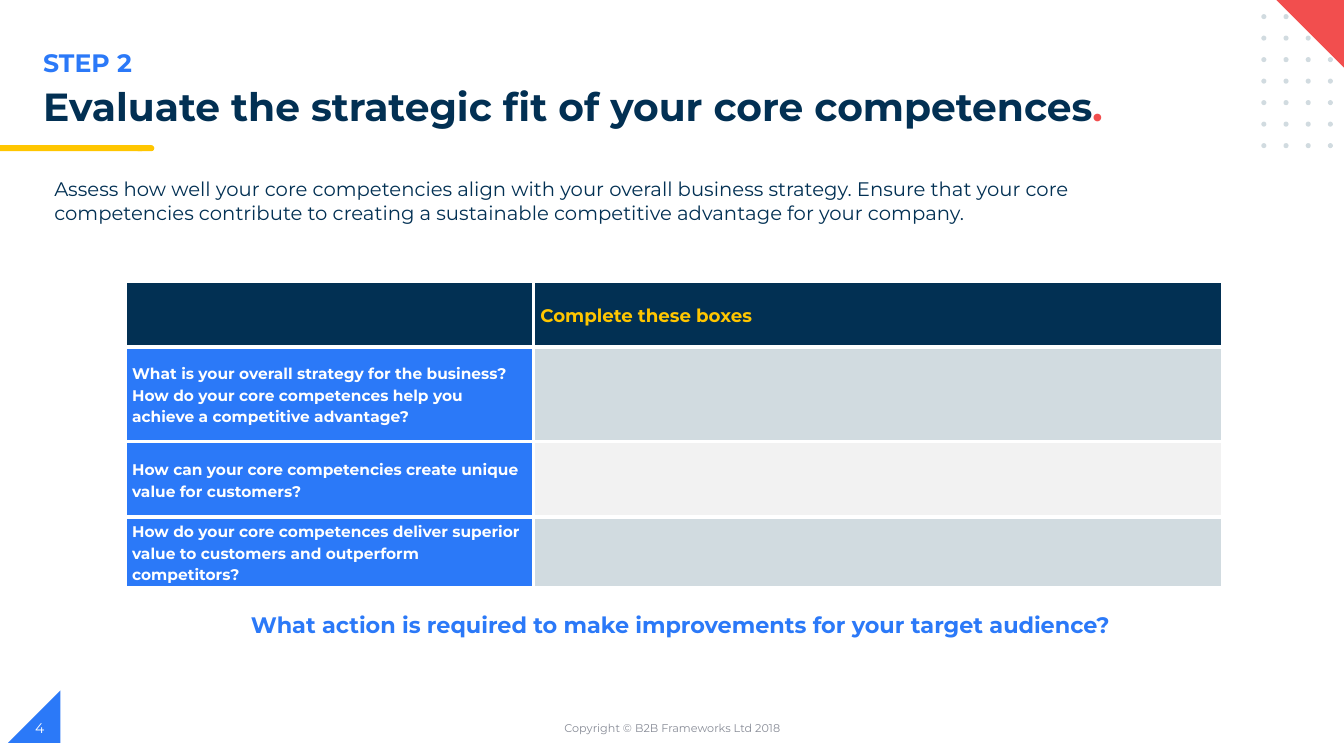
import pptx
import pptx.util
import pptx.dml.color
import pptx.enum.shapes
import pptx.enum.text
import pptx.oxml
import pptx.oxml.ns
from dataclasses import dataclass

Inches, Pt = pptx.util.Inches, pptx.util.Pt
Shape = pptx.enum.shapes.MSO_SHAPE
Anchor = pptx.enum.text.MSO_ANCHOR
Align = pptx.enum.text.PP_ALIGN


@dataclass(frozen=True)
class Theme:
    font: str = "Montserrat"
    navy: str = "023053"
    blue: str = "2B79F8"
    red: str = "F24E4E"
    yellow: str = "FFC600"
    mist: str = "D1DBE0"
    pale: str = "F2F2F2"
    grey: str = "888C97"
    white: str = "FFFFFF"
    title: int = 28
    step: int = 18
    action: int = 16
    body: int = 14
    header: int = 13
    question: int = 11
    number: int = 10
    footer: int = 8


theme = Theme()

# Content: text boxes as (left, top, width, height), size, bold, align, anchor, spans
TEXTS = [
    ((0.33, 0.42, 6.69, 0.4), theme.step, True, Align.LEFT, Anchor.TOP,
     [("STEP 2", theme.blue)]),
    ((0.33, 0.82, 11.15, 0.56), theme.title, True, Align.LEFT, Anchor.TOP,
     [("Evaluate the strategic fit of your core competences", theme.navy), (".", theme.red)]),
    ((0.44, 1.71, 11.64, 0.57), theme.body, False, Align.LEFT, Anchor.TOP,
     [("Assess how well your core competencies align with your overall business strategy. "
       "Ensure that your core competencies contribute to creating a sustainable competitive "
       "advantage for your company.", theme.navy)]),
    ((2.39, 6.01, 8.83, 0.37), theme.action, True, Align.LEFT, Anchor.TOP,
     [("What action is required to make improvements for your target audience?", theme.blue)]),
    ((4.42, 7.02, 4.5, 0.4), theme.footer, False, Align.CENTER, Anchor.MIDDLE,
     [("Copyright © B2B Frameworks Ltd 2018", theme.grey)]),
    ((0.25, 7.02, 3, 0.4), theme.number, False, Align.LEFT, Anchor.MIDDLE,
     [("4", theme.white)]),
]

# Table rows: height, then (text, size, text colour, fill) for each cell
HEADER = "Complete these boxes"
QUESTIONS = [
    (0.94, "What is your overall strategy for the business? How do your core competences "
           "help you achieve a competitive advantage?", theme.mist),
    (0.75, "How can your core competencies create unique value for customers?", theme.pale),
    (0.7, "How do your core competences deliver superior value to customers and outperform "
          "competitors?", theme.mist),
]
ROWS = [(0.65, [("", theme.header, theme.yellow, theme.navy),
                (HEADER, theme.header, theme.yellow, theme.navy)])]
ROWS += [(height, [(question, theme.question, theme.white, theme.blue),
                   ("", theme.question, theme.navy, answer_fill)])
         for height, question, answer_fill in QUESTIONS]
COLUMNS = [4.05, 6.84]
TABLE_LEFT, TABLE_TOP = 1.24, 2.79

# Decoration: shape, (left, top, width, height), fill, rotation
DOT, DOT_LEFT, DOT_TOP = 0.05, 12.51, 0.14
DOT_COLUMNS, DOT_ROWS = 4, 7
DOT_STEP_X, DOT_STEP_Y = 0.22, 1.28 / 6
SHAPES = [
    (Shape.RIGHT_TRIANGLE, (0.08, 6.85, 0.52, 0.52), theme.blue, 270),
    (Shape.FLOWCHART_TERMINATOR, (1.34, 1.44, 0.19, 0.06), theme.yellow, 0),
    (Shape.RECTANGLE, (0, 1.44, 1.41, 0.06), theme.yellow, 0),
]
SHAPES += [
    (Shape.OVAL, (DOT_LEFT + column * DOT_STEP_X, DOT_TOP + row * DOT_STEP_Y, DOT, DOT),
     theme.mist, 0)
    for row in range(DOT_ROWS) for column in range(DOT_COLUMNS)
]
SHAPES.append((Shape.RIGHT_TRIANGLE, (12.65, -0.01, 0.72, 0.72), theme.red, 180))


def rgb(colour):
    return pptx.dml.color.RGBColor.from_string(colour)


def add_span(para, text, size, colour, bold):
    span = para.add_run()
    span.text = text
    span.font.name = theme.font
    span.font.size = Pt(size)
    span.font.bold = bold
    span.font.color.rgb = rgb(colour)


def add_decoration(page, kind, place, fill, rotation):
    shape = page.shapes.add_shape(kind, *map(Inches, place))
    shape.shadow.inherit = False
    shape.fill.solid()
    shape.fill.fore_color.rgb = rgb(fill)
    shape.line.fill.background()
    shape.rotation = rotation


def add_text(page, place, size, bold, align, anchor, spans):
    frame = page.shapes.add_textbox(*map(Inches, place)).text_frame
    frame.word_wrap = True
    frame.vertical_anchor = anchor
    para = frame.paragraphs[0]
    para.alignment = align
    if size == theme.title:
        para.line_spacing = 0.9
    for text, colour in spans:
        add_span(para, text, size, colour, bold)


def add_borders(cell, colour, width):
    properties = cell._tc.get_or_add_tcPr()
    for side in ("lnL", "lnR", "lnT", "lnB"):
        line = pptx.oxml.parse_xml(
            f'<a:{side} {pptx.oxml.ns.nsdecls("a")} w="{int(Pt(width))}">'
            f'<a:solidFill><a:srgbClr val="{colour}"/></a:solidFill></a:{side}>')
        properties.append(line)


def add_cell(cell, text, size, colour, fill):
    add_borders(cell, theme.white, 3)
    cell.fill.solid()
    cell.fill.fore_color.rgb = rgb(fill)
    cell.vertical_anchor = Anchor.MIDDLE
    cell.margin_left = cell.margin_right = Inches(0.07)
    cell.margin_top = cell.margin_bottom = 0
    if text:
        para = cell.text_frame.paragraphs[0]
        para.line_spacing = 1.15
        add_span(para, text, size, colour, True)


def add_question_table(page):
    total_height = sum(height for height, _ in ROWS)
    table = page.shapes.add_table(
        len(ROWS), len(COLUMNS), Inches(TABLE_LEFT), Inches(TABLE_TOP),
        Inches(sum(COLUMNS)), Inches(total_height)).table
    for column, width in zip(table.columns, COLUMNS):
        column.width = Inches(width)
    for row, (height, cells) in zip(table.rows, ROWS):
        row.height = Inches(height)
        for cell, content in zip(row.cells, cells):
            add_cell(cell, *content)


def main():
    deck = pptx.Presentation()
    deck.slide_width, deck.slide_height = Inches(13.33), Inches(7.5)
    page = deck.slides.add_slide(deck.slide_layouts[6])
    # Corner triangles, title rule and dot grid
    for decoration in SHAPES:
        add_decoration(page, *decoration)
    # Table, then headings, body and footer
    add_question_table(page)
    for text in TEXTS:
        add_text(page, *text)
    deck.save("out.pptx")


if __name__ == "__main__":
    main()
